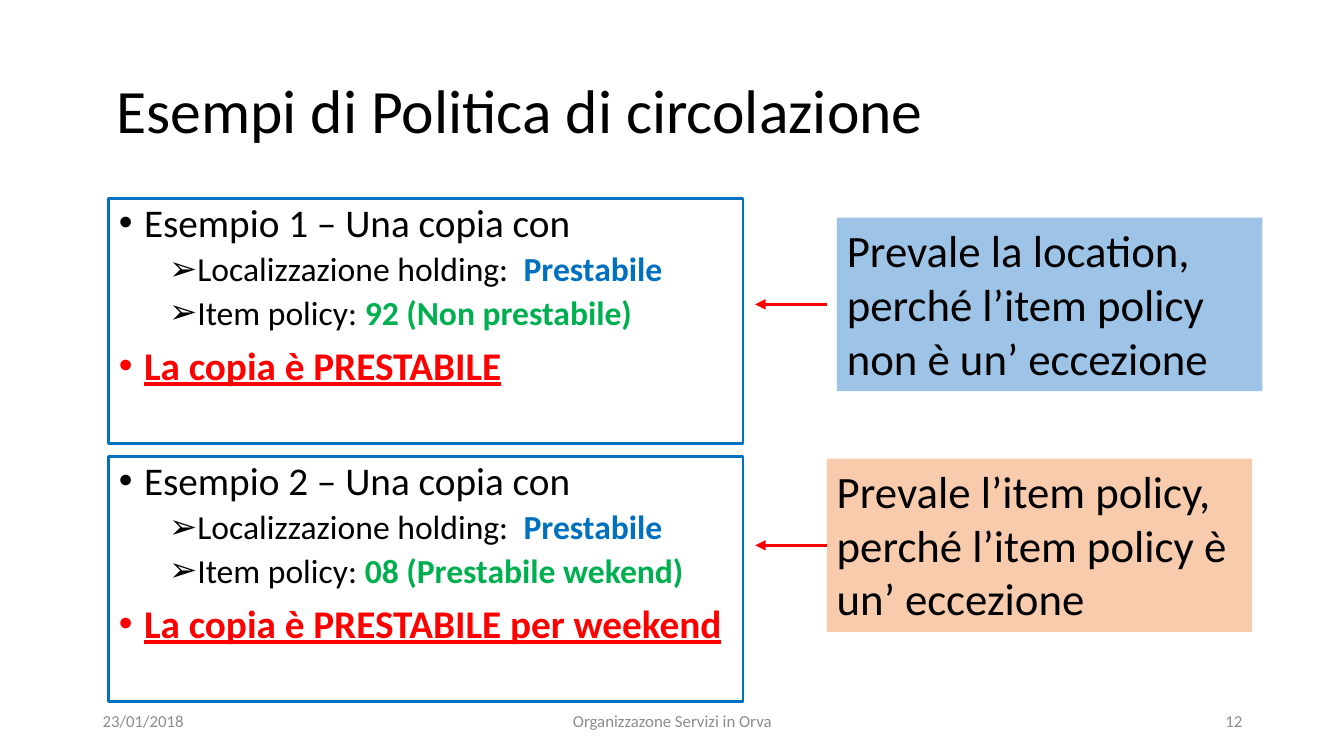
from pptx import Presentation, util as u
from pptx.dml.color import RGBColor
from pptx.enum import shapes, text
from pptx.oxml.ns import qn
from lxml import etree

W, H = 13.33, 7.5
HUES = {"ink": "000000", "blue": "0070C0", "green": "00B050", "red": "FF0000",
        "gray": "8C8C8C", "sky": "9DC3E6", "peach": "F8CBAD"}
ALIGN, ANCHOR = text.PP_ALIGN, text.MSO_ANCHOR


def hue(name):
    """Return the named colour."""
    return RGBColor.from_string(HUES[name])


def add_box(slide, box, fill=None, line=None):
    """Add a rectangle with optional fill and outline."""
    rect = slide.shapes.add_shape(shapes.MSO_SHAPE.RECTANGLE, *map(u.Inches, box))
    rect.shadow.inherit = False
    if fill:
        rect.fill.solid()
        rect.fill.fore_color.rgb = hue(fill)
    else:
        rect.fill.background()
    if line:
        rect.line.color.rgb = hue(line)
        rect.line.width = u.Pt(2)
    else:
        rect.line.fill.background()
    return rect


def add_run(para, words, size=28, color="ink", bold=False, under=False):
    """Add a formatted run to a paragraph."""
    run = para.add_run()
    run.text = words
    font = run.font
    font.name, font.size, font.bold, font.underline = "Calibri", u.Pt(size), bold, under
    font.color.rgb = hue(color)


def set_frame(shape, anchor=ANCHOR.TOP):
    """Make the text wrap and return its frame."""
    frame = shape.text_frame
    frame.word_wrap = True
    frame.vertical_anchor = anchor
    return frame


def add_label(slide, box, words, align=ALIGN.LEFT, **fmt):
    """Add one vertically centred line of text."""
    para = set_frame(slide.shapes.add_textbox(*map(u.Inches, box)), ANCHOR.MIDDLE).paragraphs[0]
    para.alignment = align
    add_run(para, words, **fmt)
    return para


def set_bullet(para, level, mark):
    """Give a paragraph its level, spacing, indent and bullet."""
    para.level, para.alignment = level, ALIGN.LEFT
    para.line_spacing = 0.9
    para.space_before = u.Pt(5 if level else 10)
    props = para._p.get_or_add_pPr()
    props.set("marL", str(u.Inches(0.25 + 0.5 * level)))
    props.set("indent", str(u.Inches(-0.25)))
    etree.SubElement(props, qn("a:buFont")).set("typeface", "Arial")
    etree.SubElement(props, qn("a:buChar")).set("char", mark)


def add_case(slide, box, num, policy, result):
    """Draw one outlined example with its bullets."""
    frame = set_frame(add_box(slide, box, line="blue"))
    rows = [
        (0, [(f"Esempio {num} – Una copia con", {})]),
        (1, [("Localizzazione holding:  ", {}), ("Prestabile", {"color": "blue", "bold": True})]),
        (1, [("Item policy: ", {}), (policy, {"color": "green", "bold": True})]),
        (0, [(result, {"color": "red", "bold": True, "under": True})]),
    ]
    for i, (level, runs) in enumerate(rows):
        para = frame.add_paragraph() if i else frame.paragraphs[0]
        set_bullet(para, level, "➢" if level else "•")
        for words, fmt in runs:
            add_run(para, words, size=24 if level else 28, **fmt)


def add_note(slide, box, words, fill):
    """Draw a filled comment and the arrow on its left."""
    note = add_box(slide, box, fill=fill)
    para = set_frame(note).paragraphs[0]
    para.alignment = ALIGN.LEFT
    add_run(para, words, size=32)
    left, top, _, high = box
    mid, start = top + high / 2, 8.2
    line = slide.shapes.add_connector(
        shapes.MSO_CONNECTOR.STRAIGHT, *map(u.Inches, (start, mid, 7.49, mid)))
    if left == start:
        line.begin_connect(note, 1)
    line.line.color.rgb = hue("red")
    line.line.width = u.Pt(2.5)
    etree.SubElement(line.line._get_or_add_ln(), qn("a:tailEnd")).set("type", "triangle")
    etree.SubElement(line._element.spPr, qn("a:effectLst"))


def add_foot(slide, box):
    """Draw the date, the centred name and the page number."""
    left, top, wide, high = box
    parts = [("23/01/2018", 0, 3, ALIGN.LEFT),
             ("Organizzazone Servizi in Orva", (wide - 4.5) / 2, 4.5, ALIGN.CENTER),
             ("12", wide - 3, 3, ALIGN.RIGHT)]
    for words, shift, span, align in parts:
        add_label(slide, (left + shift, top, span, high), words, align, size=12, color="gray")


def main():
    """Build and save the slide."""
    deck = Presentation()
    deck.slide_width, deck.slide_height = u.Inches(W), u.Inches(H)
    slide = deck.slides.add_slide(deck.slide_layouts[6])
    edge, wide = 0.92, 11.5
    title = add_label(slide, (edge, 0.4, wide, 1.45), " Esempi di Politica di circolazione", size=44)
    title.line_spacing = 0.9
    cases = [("92 (Non prestabile)", "La copia è PRESTABILE"),
             ("08 (Prestabile wekend)", "La copia è PRESTABILE per weekend")]
    for i, (policy, result) in enumerate(cases):
        add_case(slide, (1.08, 1.97 + 2.56 * i, 6.29, 2.43), i + 1, policy, result)
    notes = [(8.3, 2.16, "Prevale la location, perché l’item policy non è un’ eccezione", "sky"),
             (8.2, 4.55, "Prevale l’item policy, perché l’item policy è un’ eccezione", "peach")]
    for left, top, words, fill in notes:
        add_note(slide, (left, top, 4.22, 1.72), words, fill)
    add_foot(slide, (edge, 6.95, wide, 0.4))
    deck.save("out.pptx")


if __name__ == "__main__":
    main()
